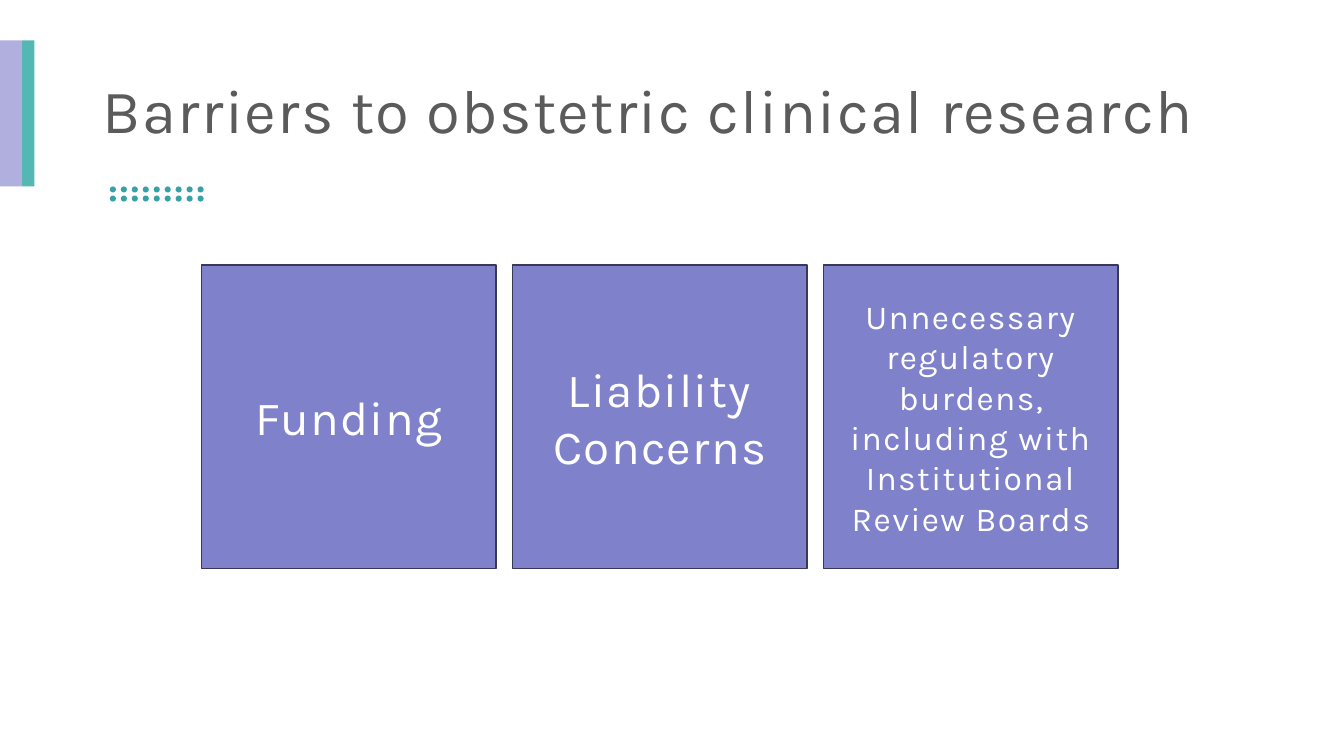
from pptx import Presentation
from pptx.dml.color import RGBColor
from pptx.enum import shapes, text
from pptx.util import Inches, Pt

TITLE = "Barriers to obstetric clinical research"
BARRIERS = [
    (["Funding"], 34),
    (["Liability Concerns"], 34),
    (["Unnecessary regulatory burdens,", "including with Institutional Review Boards"], 24),
]
ACCENT_BARS = [(0, 0.22, "B1AFDE"), (0.22, 0.12, "55B7B3")]
DOT_COLUMNS, DOT_ROWS = 9, 2
DOT_LEFT, DOT_TOP, DOT_SIZE = 1.09, 1.85, 0.06
DOT_STEP_X, DOT_STEP_Y = 0.87 / 8, 0.09
CARD_LEFT, CARD_TOP, CARD_WIDTH, CARD_HEIGHT = 2, 2.63, 2.92, 3.01
CARD_STEP = (8.17 - CARD_LEFT) / 2


def color(value):
    return RGBColor.from_string(value)


def add_block(container, kind, left, top, width, height, fill, line=None):
    block = container.shapes.add_shape(
        kind, Inches(left), Inches(top), Inches(width), Inches(height))
    block.shadow.inherit = False
    block.fill.solid()
    block.fill.fore_color.rgb = color(fill)
    if line:
        block.line.color.rgb = color(line)
        block.line.width = Pt(1)
    else:
        block.line.fill.background()
    return block


def write(box, lines, size, ink, align, spacing=1.0, tracking=1):
    frame = box.text_frame
    frame.word_wrap = True
    frame.auto_size = text.MSO_AUTO_SIZE.NONE
    frame.vertical_anchor = text.MSO_ANCHOR.MIDDLE
    for index, line in enumerate(lines):
        para = frame.add_paragraph() if index else frame.paragraphs[0]
        para.alignment = align
        para.line_spacing = spacing
        span = para.add_run()
        span.text = line
        span.font.name = "Karla"
        span.font.size = Pt(size)
        span.font.color.rgb = color(ink)
        span._r.get_or_add_rPr().set("spc", str(tracking * 100))


def main():
    deck = Presentation()
    deck.slide_width, deck.slide_height = Inches(13.33), Inches(7.5)
    page = deck.slides.add_slide(deck.slide_layouts[5])

    for left, width, fill in ACCENT_BARS:
        add_block(page, shapes.MSO_SHAPE.RECTANGLE, left, 0.4, width, 1.45, fill)

    dots = page.shapes.add_group_shape()
    for column in range(DOT_COLUMNS):
        for row in range(DOT_ROWS):
            add_block(dots, shapes.MSO_SHAPE.OVAL,
                      DOT_LEFT + column * DOT_STEP_X, DOT_TOP + row * DOT_STEP_Y,
                      DOT_SIZE, DOT_SIZE, "37A1A7")

    title = page.shapes.title
    title.left, title.top = Inches(0.92), Inches(0.4)
    title.width, title.height = Inches(11.5), Inches(1.45)
    write(title, [TITLE], 44, "5B5B5B", text.PP_ALIGN.LEFT, spacing=0.9)

    for index, (lines, size) in enumerate(BARRIERS):
        card = add_block(page, shapes.MSO_SHAPE.RECTANGLE,
                         CARD_LEFT + index * CARD_STEP, CARD_TOP,
                         CARD_WIDTH, CARD_HEIGHT, "8081CB", "383959")
        write(card, lines, size, "FFFFFF", text.PP_ALIGN.CENTER)

    deck.save("out.pptx")


if __name__ == "__main__":
    main()
